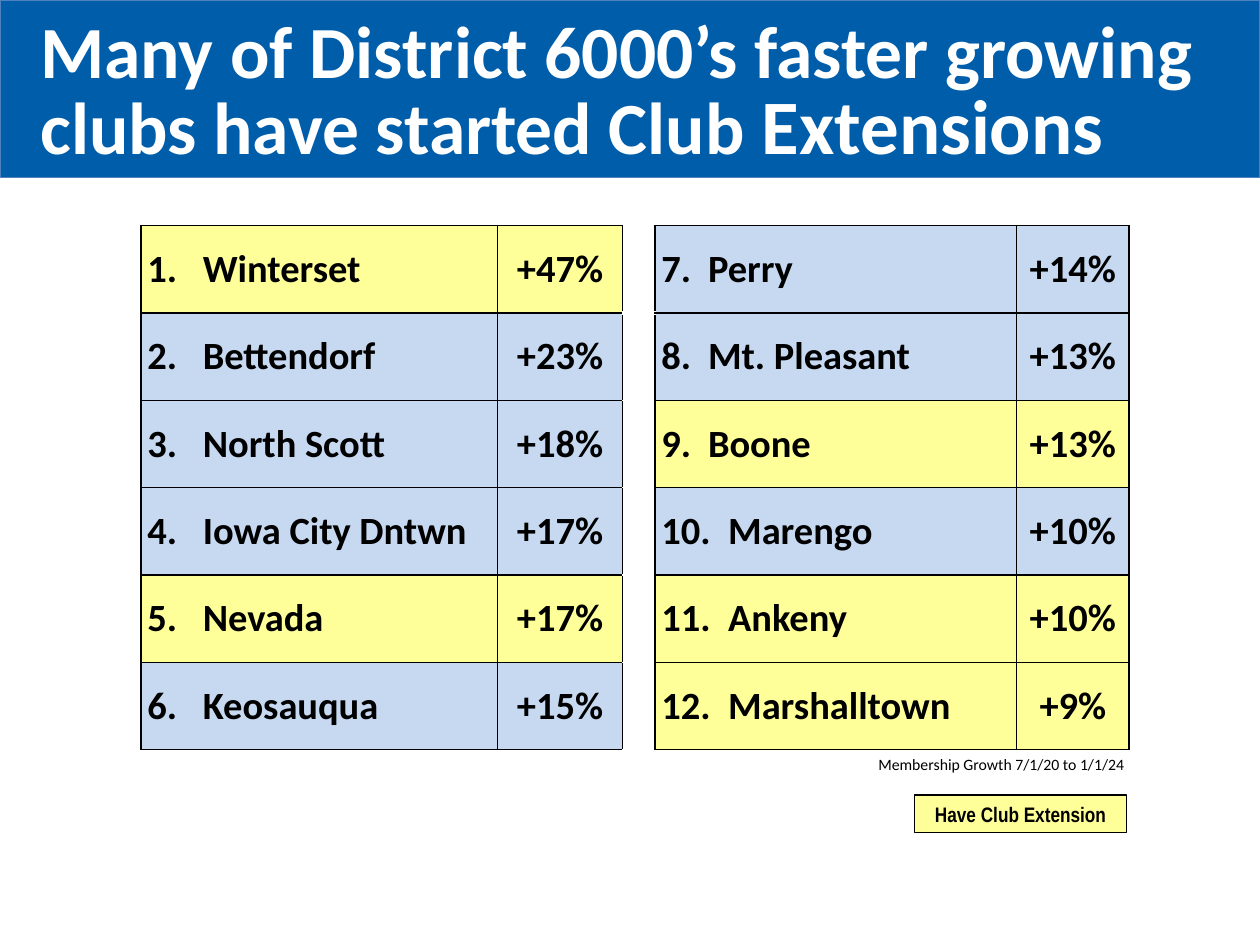
"""Build a slide ranking the faster growing clubs of District 6000."""
from lxml import etree
from pptx import Presentation
from pptx import util as u
from pptx.dml.color import RGBColor
from pptx.enum import shapes, text
from pptx.oxml import ns

TITLE = [("Many of District 6000’s faster growing clubs have started Club ", 42),
         ("Extensions", 44)]
LEFT = [("Winterset", "+47%", True), ("Bettendorf", "+23%", False),
        ("North Scott", "+18%", False), ("Iowa City Dntwn", "+17%", False),
        ("Nevada", "+17%", True), ("Keosauqua", "+15%", False)]
RIGHT = [("Perry", "+14%", False), ("Mt. Pleasant", "+13%", False),
         ("Boone", "+13%", True), ("Marengo", "+10%", False),
         ("Ankeny", "+10%", True), ("Marshalltown", "+9%", True)]
NOTE = "Membership Growth 7/1/20 to 1/1/24"
KEY = "Have Club Extension"
HEX = {"band": "005DAA", "edge": "4F81BD", "mark": "FFFF99", "plain": "C6D9F1",
       "ink": "000000", "white": "FFFFFF"}
COLS = [2.83, 0.99, 0.26, 2.87, 0.89]
ROW = 4.16 / len(LEFT)
ALIGN = {"l": text.PP_ALIGN.LEFT, "c": text.PP_ALIGN.CENTER, "r": text.PP_ALIGN.RIGHT}


def tint(name):
    return RGBColor.from_string(HEX[name])


def box(left, top, width, height):
    return [u.Inches(n) for n in (left, top, width, height)]


def write(frame, runs, size=22, font="Calibri", color="ink", bold=True,
          align="l", lead=None, tab=None):
    if isinstance(runs, str):
        runs = [(runs, size)]
    para = frame.paragraphs[0]
    para.alignment = ALIGN[align]
    if lead:
        para.line_spacing = u.Pt(lead)
    if tab:
        stops = etree.SubElement(para._p.get_or_add_pPr(), ns.qn("a:tabLst"))
        etree.SubElement(stops, ns.qn("a:tab"), pos=str(u.Inches(tab)), algn="l")
    for words, points in runs:
        run = para.add_run()
        run.text = words
        face = run.font
        face.name, face.size, face.bold = font, u.Pt(points), bold
        face.color.rgb = tint(color)


def pad(item):
    item.margin_left = item.margin_right = u.Inches(0.05)
    item.margin_top = item.margin_bottom = u.Inches(0.05)


def rule(cell, sides):
    props = cell._tc.get_or_add_tcPr()
    for side in "LRTB":
        color, width = sides.get(side, ("ink", 1))
        line = etree.SubElement(props, ns.qn("a:ln" + side), w=str(u.Pt(width)))
        fill = etree.SubElement(line, ns.qn("a:solidFill"))
        etree.SubElement(fill, ns.qn("a:srgbClr"), val=HEX[color])


def block(slide, place, fill, edge):
    shape = slide.shapes.add_shape(shapes.MSO_SHAPE.RECTANGLE, *box(*place))
    shape.shadow.inherit = False
    shape.fill.solid()
    shape.fill.fore_color.rgb = tint(fill)
    shape.line.color.rgb = tint(edge)
    shape.line.width = u.Pt(0.75)
    return shape


def fill_club(grid, row, col, rank, club):
    name, growth, marked = club
    tab = 0.44 if col == 0 else 0.37 if rank < 10 else 0.53
    parts = [(f"{rank}.\t{name}", {"tab": tab}), (growth, {"align": "c"})]
    for step, (words, style) in enumerate(parts):
        cell = grid.cell(row, col + step)
        pad(cell)
        cell.vertical_anchor = text.MSO_ANCHOR.MIDDLE
        rule(cell, {})
        cell.fill.solid()
        cell.fill.fore_color.rgb = tint("mark" if marked else "plain")
        write(cell.text_frame, words, **style)


def add_clubs(slide):
    place = box(1.12, 1.79, sum(COLS), ROW * len(LEFT))
    grid = slide.shapes.add_table(len(LEFT), len(COLS), *place).table
    grid.first_row = grid.horz_banding = False
    for col, width in zip(grid.columns, COLS):
        col.width = u.Inches(width)
    for row, pair in enumerate(zip(LEFT, RIGHT)):
        grid.rows[row].height = u.Inches(ROW)
        for side, club in enumerate(pair):
            fill_club(grid, row, side * 3, row + 1 + side * len(LEFT), club)
        gap = grid.cell(row, 2)
        rule(gap, {"T": ("white", 1), "B": ("white", 1 if row else 3)})
        gap.fill.background()


def main():
    deck = Presentation()
    deck.slide_width, deck.slide_height = u.Inches(10), u.Inches(7.5)
    slide = deck.slides.add_slide(deck.slide_layouts[5])
    title = slide.shapes.title
    block(slide, (0, 0, 10, 1.41), "band", "edge")
    slide.shapes._spTree.append(title._element)
    title.left, title.top, title.width, title.height = box(0.27, 0.08, 9.52, 1.35)
    frame = title.text_frame
    pad(frame)
    frame.word_wrap = True
    frame.auto_size = text.MSO_AUTO_SIZE.NONE
    frame.vertical_anchor = text.MSO_ANCHOR.TOP
    write(frame, TITLE, color="white", lead=44)

    add_clubs(slide)

    key = block(slide, (7.26, 6.31, 1.68, 0.3), "mark", "ink").text_frame
    pad(key)
    key.word_wrap = True
    key.vertical_anchor = text.MSO_ANCHOR.MIDDLE
    write(key, KEY, size=12, font="Arial Narrow", align="c")

    note = slide.shapes.add_textbox(*box(5.45, 5.94, 3.52, 0.23)).text_frame
    pad(note)
    note.word_wrap = True
    write(note, NOTE, size=9, bold=False, align="r")
    deck.save("out.pptx")


if __name__ == "__main__":
    main()
